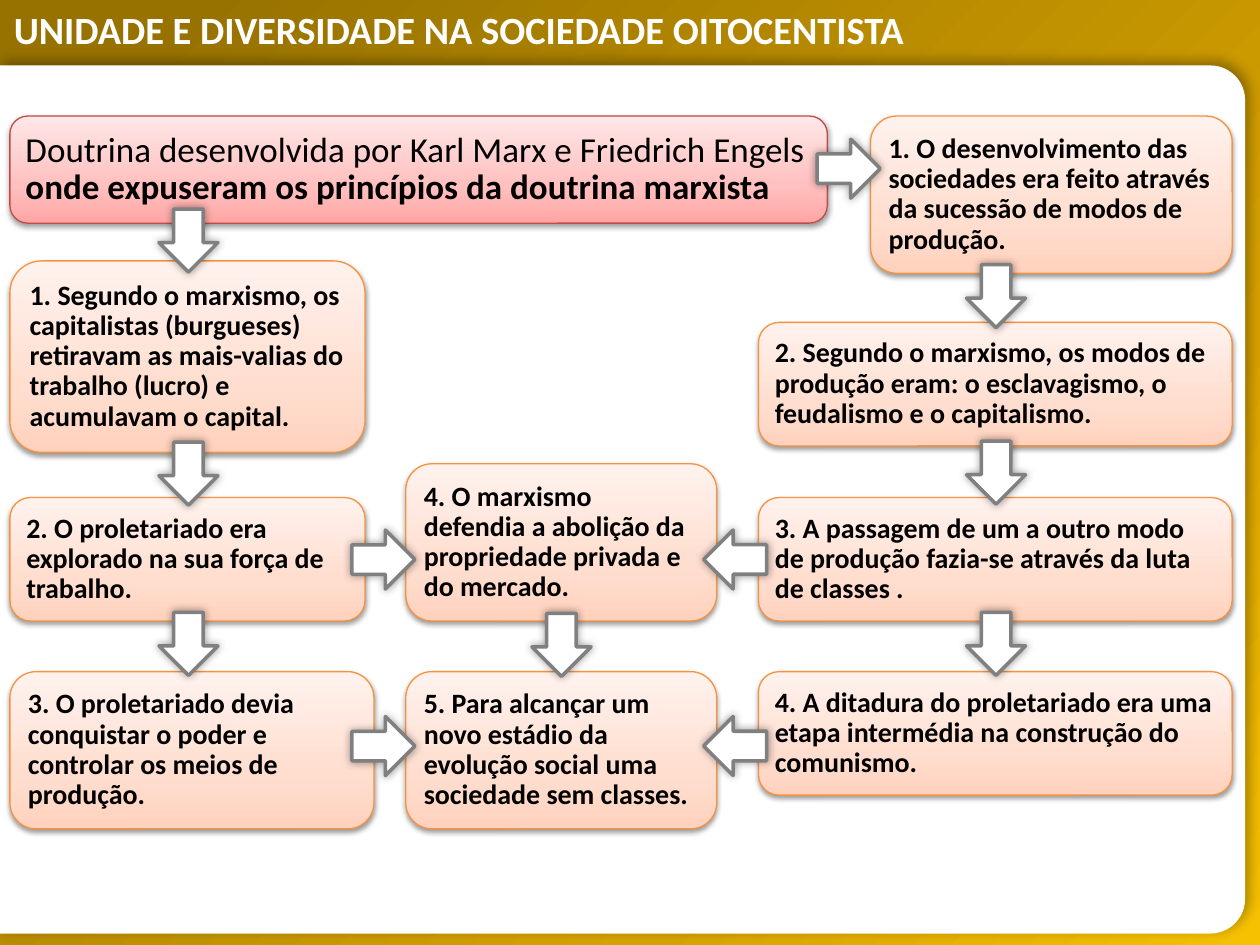
"""Build a flow-chart slide on the principles of Marxist doctrine."""
from dataclasses import dataclass

from lxml import etree
from pptx import Presentation
from pptx.dml.color import RGBColor
from pptx.enum.shapes import MSO_SHAPE
from pptx.enum.text import MSO_ANCHOR, PP_ALIGN
from pptx.oxml.ns import qn
from pptx.util import Cm, Pt

RECTANGLE = MSO_SHAPE.RECTANGLE
ROUNDED = MSO_SHAPE.ROUNDED_RECTANGLE
ROUNDED_SIDE = MSO_SHAPE.ROUND_2_SAME_RECTANGLE
ARROW = MSO_SHAPE.DOWN_ARROW
LEFT = PP_ALIGN.LEFT
MIDDLE = MSO_ANCHOR.MIDDLE
DOWN, TO_LEFT, TO_RIGHT = 0, 90, 270


@dataclass(frozen=True)
class Theme:
    """Colours, gradients, shadows and type sizes of the slide."""
    font: str = "Calibri"
    title_size: int = 22
    header_size: int = 20
    step_size: int = 16
    white: str = "FFFFFF"
    ink: str = "000000"
    arrow_line: str = "808080"
    header_line: str = "BF4C48"
    step_line: str = "F69240"
    gold: tuple = ((9, "977200"), (72, "D7A200"), (100, "F6C100"))
    rose: tuple = ((0, "FFA6A5"), (35, "FFC0BF"), (100, "FFE7E7"))
    peach: tuple = ((0, "FFD2BD"), (35, "FFDED0"), (100, "FFF2ED"))
    panel_shadow: tuple = (30, 7, 3, 315)
    box_shadow: tuple = (38, 3.1, 1.6, 90)
    arrow_shadow: tuple = (40, 5, 0, 0)


THEME = Theme()

TITLE = "UNIDADE E DIVERSIDADE NA SOCIEDADE OITOCENTISTA"
HEADER = (
    ("Doutrina desenvolvida por Karl Marx e Friedrich Engels ", False),
    ("onde expuseram os princípios da doutrina marxista", True),
)

LEFT_X, MID_X, RIGHT_X = 0.2, 8.18, 15.29
LEFT_W, MID_W, RIGHT_W = 7.16, 6.27, 9.55
TOP_ROW, THIRD_ROW, LAST_ROW = 2.34, 10.03, 13.54
LOW, TALL = 2.49, 3.17

STEPS = (
    (LEFT_X, LAST_ROW, 7.34, TALL,
     "3. O proletariado devia conquistar o poder e controlar os meios de produção."),
    (LEFT_X, 5.26, LEFT_W, 3.86,
     "1. Segundo o marxismo, os capitalistas (burgueses) retiravam as mais-valias "
     "do trabalho (lucro) e acumulavam o capital."),
    (RIGHT_X, LAST_ROW, RIGHT_W, LOW,
     "4. A ditadura do proletariado era uma etapa intermédia na construção do comunismo."),
    (RIGHT_X, 6.5, RIGHT_W, LOW,
     "2. Segundo o marxismo, os modos de produção eram: o esclavagismo, "
     "o feudalismo e o capitalismo."),
    (RIGHT_X, THIRD_ROW, RIGHT_W, LOW,
     "3. A passagem de um a outro modo de produção fazia-se através da luta de classes ."),
    (MID_X, 9.35, MID_W, TALL,
     "4. O marxismo defendia a abolição da propriedade privada e do mercado."),
    (17.55, TOP_ROW, 7.29, TALL,
     "1. O desenvolvimento das sociedades era feito através da sucessão de modos de produção."),
    (MID_X, LAST_ROW, MID_W, TALL,
     "5. Para alcançar um novo estádio da evolução social uma sociedade sem classes."),
    (LEFT_X, THIRD_ROW, LEFT_W, LOW,
     "2. O proletariado era explorado na sua força de trabalho."),
)

ARROW_W, ARROW_H = 1.19, 1.27
ARROW_CENTRES = (
    (DOWN, ((3.8, 4.85), (3.8, 9.55), (3.8, 12.98),
            (20.08, 5.97), (20.08, 9.53), (20.08, 12.98), (11.32, 13))),
    (TO_RIGHT, ((17.11, 3.4), (7.73, 11.28), (7.73, 15.04))),
    (TO_LEFT, ((14.82, 11.28), (14.82, 15.04))),
)


def add_block(slide, kind, left, top, width, height, line=None, weight=0.75):
    """Add a preset shape without shadow, outlined only if a line colour is given."""
    block = slide.shapes.add_shape(kind, Cm(left), Cm(top), Cm(width), Cm(height))
    block.shadow.inherit = False
    if line:
        block.line.color.rgb = RGBColor.from_string(line)
        block.line.width = Pt(weight)
    else:
        block.line.fill.background()
    return block


def fill_solid(block, colour):
    """Fill a shape with one colour."""
    block.fill.solid()
    block.fill.fore_color.rgb = RGBColor.from_string(colour)


def fill_gradient(block, stops, angle):
    """Fill a shape with a linear gradient, its angle counter-clockwise."""
    block.fill.gradient()
    block.fill.gradient_angle = angle
    stop_list = block.element.spPr.find(".//" + qn("a:gsLst"))
    stop_list.clear()
    for position, colour in stops:
        stop = etree.SubElement(stop_list, qn("a:gs"), pos=str(position * 1000))
        etree.SubElement(stop, qn("a:srgbClr"), val=colour)


def cast_shadow(block, shadow):
    """Give a shape an outer shadow of opacity, blur, distance and direction."""
    opacity, blur, distance, direction = shadow
    effects = block.element.spPr.find(qn("a:effectLst"))
    outer = etree.SubElement(
        effects, qn("a:outerShdw"), blurRad=str(Pt(blur)), dist=str(Pt(distance)),
        dir=str(direction * 60000), rotWithShape="0")
    colour = etree.SubElement(outer, qn("a:srgbClr"), val=THEME.ink)
    etree.SubElement(colour, qn("a:alpha"), val=str(opacity * 1000))


def style_paragraph(paragraph, size, colour, spacing):
    """Set the alignment, spacing and font of a paragraph."""
    paragraph.alignment = LEFT
    paragraph.line_spacing = spacing
    paragraph.font.name = THEME.font
    paragraph.font.size = Pt(size)
    paragraph.font.color.rgb = RGBColor.from_string(colour)


def add_backdrop(slide):
    """Add the golden ground and the white panel with rounded right corners."""
    ground = add_block(slide, RECTANGLE, 0, 0, 25.4, 19.05)
    fill_gradient(ground, THEME.gold, 315)
    panel = add_block(slide, ROUNDED_SIDE, 3.8, -2.48, 17.5, 25.1)
    panel.rotation = 90
    panel.adjustments[0] = 0.04
    fill_solid(panel, THEME.white)
    cast_shadow(panel, THEME.panel_shadow)


def add_title(slide):
    """Add the slide title on the golden band."""
    title = slide.shapes.add_textbox(Cm(0.03), Cm(0.36), Cm(23.42), Cm(0.84))
    title.text_frame.word_wrap = True
    heading = title.text_frame.paragraphs[0]
    heading.text = TITLE
    style_paragraph(heading, THEME.title_size, THEME.white, Pt(16))
    heading.font.bold = True


def add_box(slide, place, stops, line, size):
    """Add a rounded gradient box and return its styled paragraph."""
    box = add_block(slide, ROUNDED, *place, line=line)
    fill_gradient(box, stops, 90)
    cast_shadow(box, THEME.box_shadow)
    frame = box.text_frame
    frame.word_wrap = True
    frame.vertical_anchor = MIDDLE
    frame.margin_left = frame.margin_right = Cm(0.21)
    frame.margin_top = frame.margin_bottom = Cm(0.21)
    style_paragraph(frame.paragraphs[0], size, THEME.ink, 0.9)
    return frame.paragraphs[0]


def add_header(slide):
    """Add the box that introduces the doctrine."""
    place = (LEFT_X, TOP_ROW, 16.48, 2.16)
    intro = add_box(slide, place, THEME.rose, THEME.header_line, THEME.header_size)
    for wording, bold in HEADER:
        run = intro.add_run()
        run.text = wording
        run.font.bold = bold


def add_step(slide, place, wording):
    """Add one numbered step."""
    step = add_box(slide, place, THEME.peach, THEME.step_line, THEME.step_size)
    step.text = wording
    step.font.bold = True


def add_arrow(slide, centre_x, centre_y, turn):
    """Add a block arrow around its centre."""
    arrow = add_block(slide, ARROW, centre_x - ARROW_W / 2, centre_y - ARROW_H / 2,
                      ARROW_W, ARROW_H, THEME.arrow_line, 2)
    arrow.rotation = turn
    fill_solid(arrow, THEME.white)
    cast_shadow(arrow, THEME.arrow_shadow)


def main():
    """Build and save the slide."""
    deck = Presentation()
    deck.slide_width, deck.slide_height = Cm(25.4), Cm(19.05)
    slide = deck.slides.add_slide(deck.slide_layouts[6])
    add_backdrop(slide)
    add_title(slide)
    add_header(slide)
    for *place, wording in STEPS:
        add_step(slide, place, wording)
    for turn, centres in ARROW_CENTRES:
        for centre_x, centre_y in centres:
            add_arrow(slide, centre_x, centre_y, turn)
    deck.save("out.pptx")


if __name__ == "__main__":
    main()
